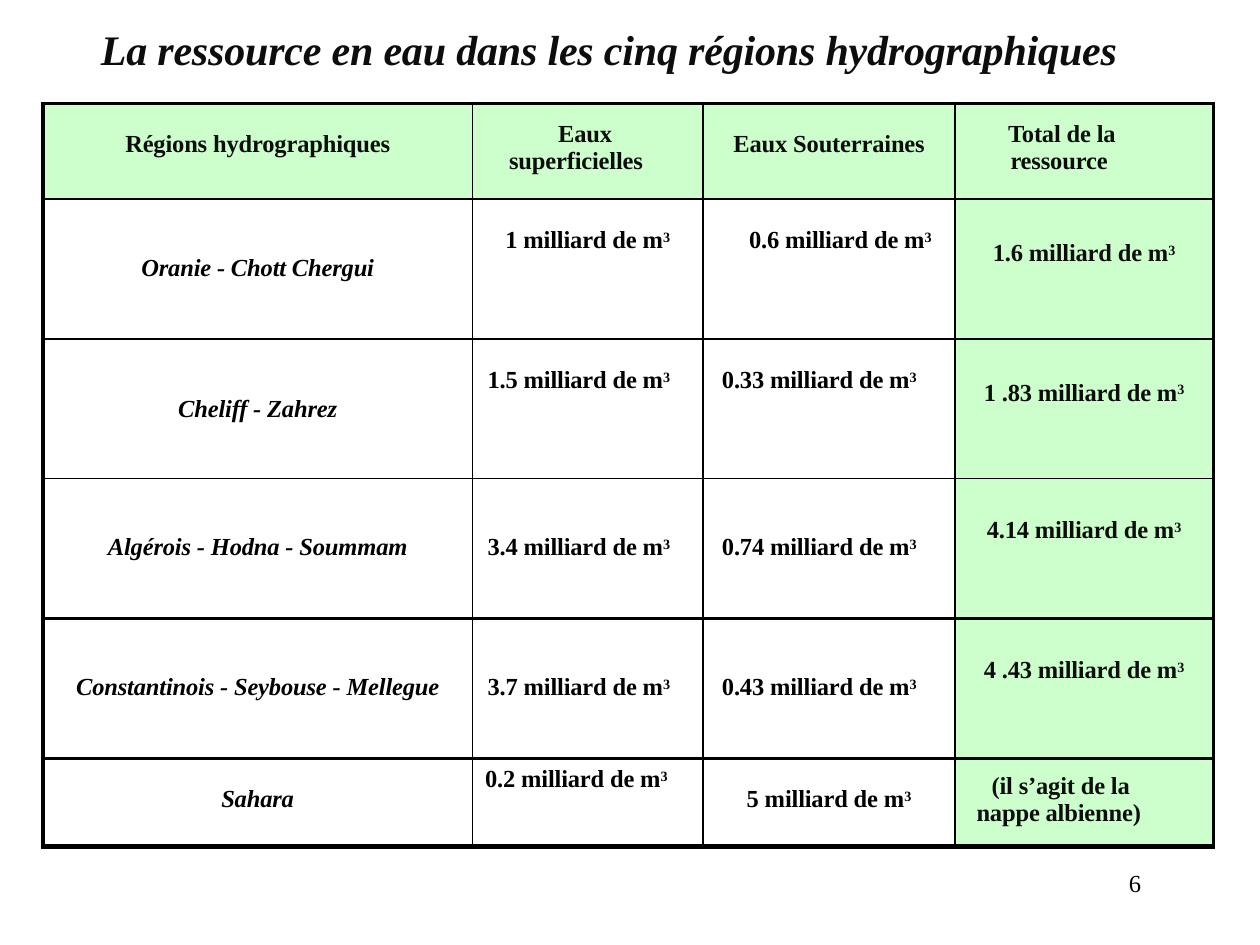
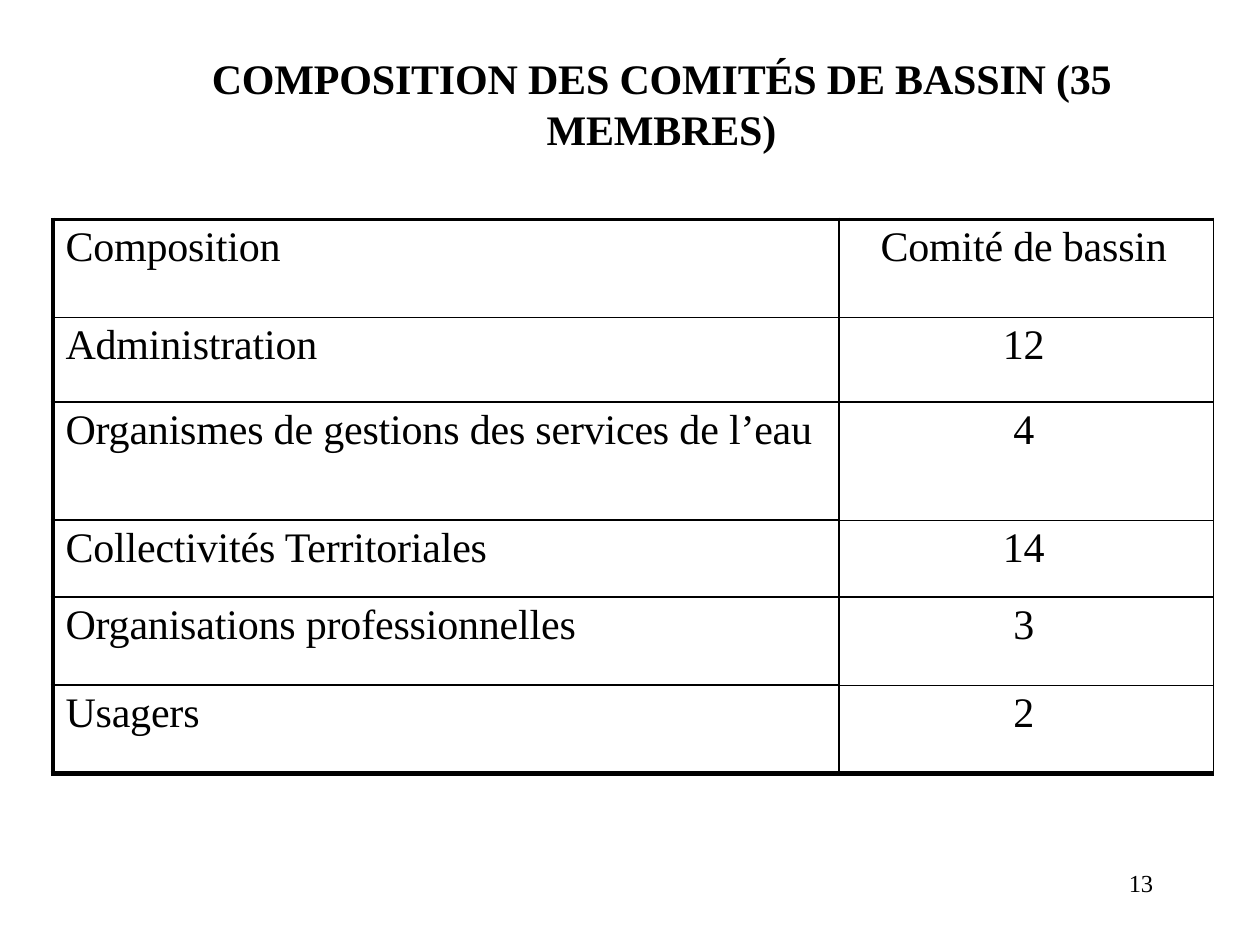
from pptx import Presentation
from pptx import util as u
from pptx.dml.color import RGBColor
from pptx.enum import text
from pptx.oxml import parse_xml
from pptx.oxml.ns import nsdecls

HUES = {"ink": "000000", "soft": "0D0D0D", "mint": "CCFFCC"}
FONT = "Times New Roman"
LEFT, MID = text.PP_ALIGN.LEFT, text.PP_ALIGN.CENTER


def write(frame, words, size, hue="ink", bold=False, italic=False, align=LEFT):
    para = frame.paragraphs[0]
    para.alignment = align
    cubic = words.endswith(" m3")
    parts = [words[:-1], "3"] if cubic else [words]
    for spot, part in enumerate(parts):
        run = para.add_run()
        run.text = part
        font = run.font
        font.name, font.size = FONT, u.Pt(size)
        font.bold, font.italic = bold, italic
        font.color.rgb = RGBColor.from_string(HUES[hue])
        props = run._r.get_or_add_rPr()
        props.set("spc", "-10")
        if spot:
            props.set("baseline", "25000")
    return para


def edge(cell, widths):
    props = cell._tc.get_or_add_tcPr()
    for spot, (side, width) in enumerate(zip("LRTB", widths)):
        line = parse_xml(
            f'<a:ln{side} {nsdecls("a")} w="{u.Pt(width)}"><a:solidFill>'
            f'<a:srgbClr val="{HUES["ink"]}"/></a:solidFill></a:ln{side}>')
        props.insert(spot, line)


deck = Presentation()
deck.slide_width, deck.slide_height = u.Inches(10), u.Inches(7.5)

pages = [
    dict(title="La ressource en eau dans les cinq régions hydrographiques",
         box=(0.79, 0.18, 8.18, 0.43), hue="soft", italic=True, align=LEFT,
         num="6", at=(0.34, 0.82), cols=[3.41, 1.83, 2, 2.05],
         rows=[0.76] + [1.11] * 4 + [0.7]),
    dict(title="COMPOSITION DES COMITÉS DE BASSIN (35 MEMBRES)",
         box=(1.5, 0.41, 7.5, 0.83), hue="ink", italic=False, align=MID,
         num="13", at=(0.42, 1.74), cols=[6.24, 2.97],
         rows=[0.78, 0.67, 0.94, 0.61, 0.7, 0.7]),
]
grids = []
for page in pages:
    slide = deck.slides.add_slide(deck.slide_layouts[5])
    title = slide.shapes.title
    title.left, title.top, title.width, title.height = map(u.Inches, page["box"])
    note = slide.shapes.add_textbox(*map(u.Inches, (8.93, 6.88, 0.25, 0.24)))
    for shape in (title, note):
        frame = shape.text_frame
        frame.word_wrap = True
        frame.auto_size = text.MSO_AUTO_SIZE.NONE
        frame.vertical_anchor = text.MSO_ANCHOR.TOP
        frame.margin_left = frame.margin_right = u.Inches(0.01)
        frame.margin_top, frame.margin_bottom = u.Inches(0.01), 0
    write(title.text_frame, page["title"], 24, page["hue"], True,
          page["italic"], page["align"])
    note.text_frame.margin_left = u.Inches(0.03)
    note.text_frame.margin_right = 0
    write(note.text_frame, page["num"], 14)

    cols, rows = page["cols"], page["rows"]
    size = (sum(cols), sum(rows))
    grid = slide.shapes.add_table(
        len(rows), len(cols), *map(u.Inches, page["at"] + size)).table
    grid.first_row = grid.horz_banding = False
    for col, width in zip(grid.columns, cols):
        col.width = u.Inches(width)
    for row, height in zip(grid.rows, rows):
        row.height = u.Inches(height)
    for cell in grid.iter_cells():
        cell.fill.background()
        cell.margin_left = cell.margin_right = 0
        cell.margin_top = cell.margin_bottom = 0
    grids.append(grid)

water, board = grids

stock = [
    ["Régions hydrographiques", "Eaux superficielles", "Eaux Souterraines",
     "Total de la ressource"],
    ["Oranie - Chott Chergui", "1 milliard de m3", "0.6 milliard de m3",
     "1.6 milliard de m3"],
    ["Cheliff - Zahrez", "1.5 milliard de m3", "0.33 milliard de m3",
     "1 .83 milliard de m3"],
    ["Algérois - Hodna - Soummam", "3.4 milliard de m3", "0.74 milliard de m3",
     "4.14 milliard de m3"],
    ["Constantinois - Seybouse - Mellegue", "3.7 milliard de m3",
     "0.43 milliard de m3", "4 .43 milliard de m3"],
    ["Sahara", "0.2 milliard de m3", "5 milliard de m3",
     "(il s’agit de la nappe albienne)"],
]
tops = [
    [0.22, 0.14, 0.22, 0.14],
    [0.44, 0.22, 0.22, 0.32],
    [0.45, 0.22, 0.22, 0.32],
    [0.44, 0.44, 0.44, 0.3],
    [0.44, 0.44, 0.44, 0.3],
    [0.22, 0.06, 0.22, 0.11],
]
pads = {(1, 2): 0.18, (5, 1): 0.1}
for r in (2, 3, 4):
    pads[r, 1], pads[r, 2] = 0.12, 0.15
hangs = {(0, 1): (0.29, 0.39, 0.14), (0, 3): (0.44, -0.02, 0.14),
         (5, 3): (0.17, 0.12, 0.3)}
rules = [2.25, 1, 1, 1, 1.5, 1.5, 3]

for r, line in enumerate(stock):
    for c, words in enumerate(line):
        cell = water.cell(r, c)
        cell.margin_top = u.Inches(tops[r][c])
        cell.margin_left = u.Inches(pads.get((r, c), 0))
        flush = (r, c) in hangs or ((r, c) in pads and (r, c) != (1, 2))
        tint = r == 0 or c == 3
        para = write(cell.text_frame, words, 14, "soft" if tint else "ink", True,
                     r > 0 and c == 0, LEFT if flush else MID)
        if (r, c) in hangs:
            inset, first, right = hangs[r, c]
            props = para._p.get_or_add_pPr()
            props.set("marL", str(u.Inches(inset)))
            props.set("indent", str(u.Inches(first)))
            cell.margin_right = u.Inches(right)
        if tint:
            cell.fill.solid()
            cell.fill.fore_color.rgb = RGBColor.from_string(HUES["mint"])
        edge(cell, (3 if c == 0 else 1, 2.25 if c == 3 else 1,
                    rules[r], rules[r + 1]))

seats = [
    ("Composition", "Comité de bassin"),
    ("Administration", "12"),
    ("Organismes de gestions des services de l’eau", "4"),
    ("Collectivités Territoriales", "14"),
    ("Organisations professionnelles", "3"),
    ("Usagers", "2"),
]
rules = [[2.25, 1, 1, 1.5, 1.5, 1.5, 3], [2.25, 1, 1, 1, 1, 1, 3]]

for r, line in enumerate(seats):
    for c, words in enumerate(line):
        cell = board.cell(r, c)
        cell.margin_top = cell.margin_right = u.Inches(0.04)
        cell.margin_left = u.Inches(0 if c else 0.1)
        write(cell.text_frame, words, 24, align=MID if c else LEFT)
        outer = 3 if r else 2.25
        edge(cell, (1 if c else outer, 1, rules[c][r], rules[c][r + 1]))

deck.save("out.pptx")
